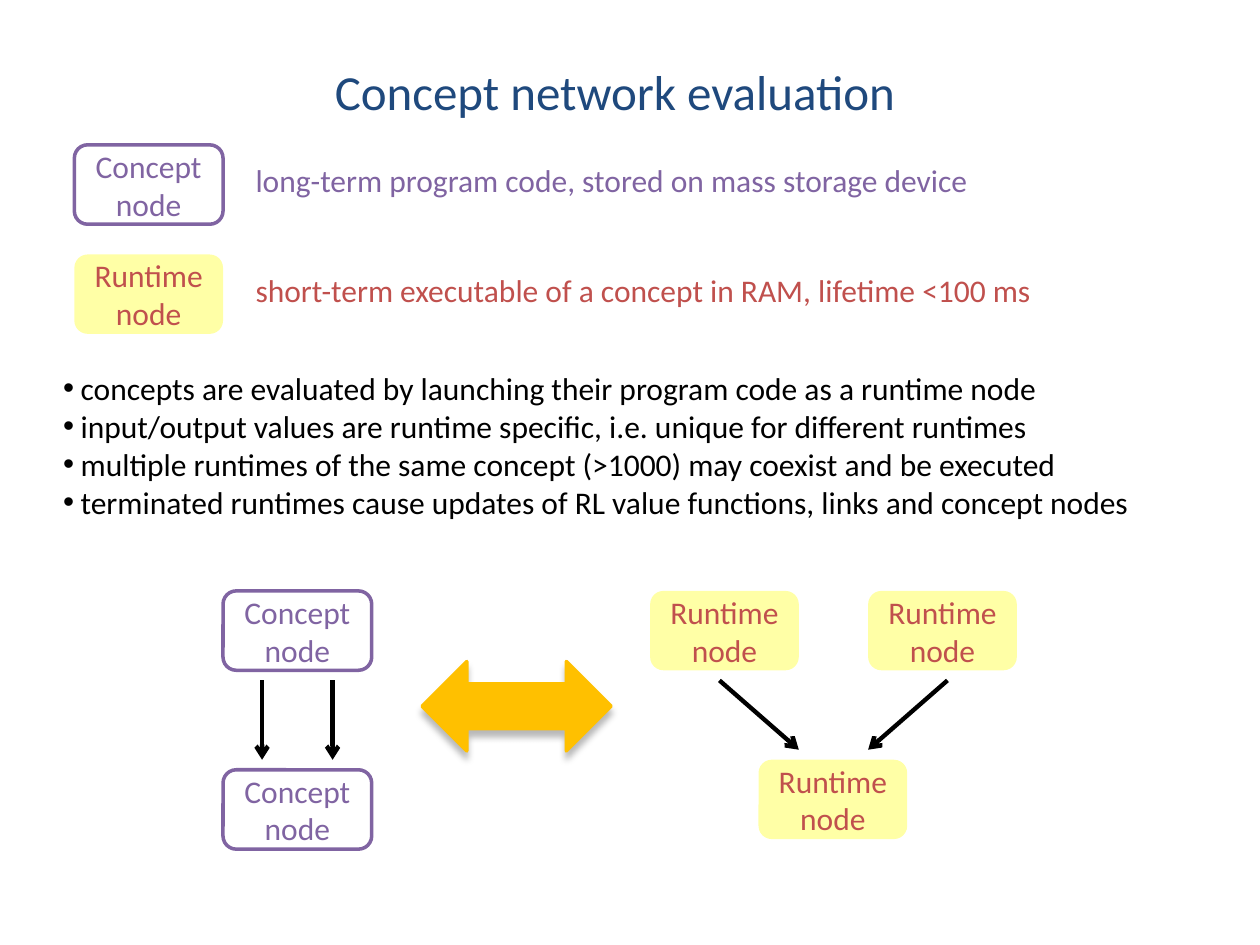
from lxml import etree
from pptx import Presentation
from pptx.dml.color import RGBColor
from pptx.enum.shapes import MSO_CONNECTOR, MSO_SHAPE
from pptx.enum.text import MSO_ANCHOR, MSO_AUTO_SIZE, PP_ALIGN
from pptx.oxml.ns import qn
from pptx.util import Inches, Pt

ROUND_RECT = MSO_SHAPE.ROUNDED_RECTANGLE
DOUBLE_ARROW = MSO_SHAPE.LEFT_RIGHT_ARROW
STRAIGHT = MSO_CONNECTOR.STRAIGHT
LEFT, CENTER = PP_ALIGN.LEFT, PP_ALIGN.CENTER
MIDDLE = MSO_ANCHOR.MIDDLE
NO_AUTOFIT = MSO_AUTO_SIZE.NONE

FONT = "Calibri"
COLORS = {
    "title": "1F497D",
    "concept": "8064A2",
    "concept_fill": "FFFFFF",
    "runtime": "C0504D",
    "runtime_fill": "FFFF00",
    "body": "000000",
    "arrow": "000000",
    "exchange": "FFC000",
}
NODE_W, NODE_H = 1.18, 0.63
BULLETS = [
    "concepts are evaluated by launching their program code as a runtime node",
    "input/output values are runtime specific, i.e. unique for different runtimes",
    "multiple runtimes of the same concept (>1000) may coexist and be executed",
    "terminated runtimes cause updates of RL value functions, links and concept nodes",
]


def rgb(name):
    return RGBColor.from_string(COLORS[name])


def place(sp, x, y, w, h):
    sp.left, sp.top, sp.width, sp.height = (Inches(v) for v in (x, y, w, h))


def format_text(tf, color, size=18, align=LEFT):
    for p in tf.paragraphs:
        p.alignment = align
        for r in p.runs:
            r.font.name = FONT
            r.font.size = Pt(size)
            r.font.color.rgb = rgb(color)


def add_node(slide, kind, x, y):
    """Rounded box: outlined for a concept, translucent for a runtime."""
    sp = slide.shapes.add_shape(ROUND_RECT, Inches(x), Inches(y),
                                Inches(NODE_W), Inches(NODE_H))
    sp.shadow.inherit = False
    sp.fill.solid()
    sp.fill.fore_color.rgb = rgb(kind + "_fill")
    if kind == "concept":
        sp.line.color.rgb = rgb(kind)
        sp.line.width = Pt(2)
    else:
        sp.line.fill.background()
        color = sp.fill._xPr.find(qn("a:solidFill"))[0]
        etree.SubElement(color, qn("a:alpha"), val="35000")
    tf = sp.text_frame
    tf.word_wrap = True
    tf.vertical_anchor = MIDDLE
    tf.text = kind.capitalize() + "\vnode"
    format_text(tf, kind, align=CENTER)


def add_arrow(slide, x1, y1, x2, y2):
    line = slide.shapes.add_connector(STRAIGHT, Inches(x1), Inches(y1),
                                      Inches(x2), Inches(y2))
    line.line.color.rgb = rgb("arrow")
    line.line.width = Pt(2.5)
    etree.SubElement(line.line._get_or_add_ln(), qn("a:tailEnd"), type="arrow")
    etree.SubElement(line._element.spPr, qn("a:effectLst"))


def add_title(slide, x, y, w, h):
    sp = slide.shapes.title
    place(sp, x, y, w, h)
    tf = sp.text_frame
    tf.text = "Concept network evaluation"
    tf.word_wrap = False
    tf.auto_size = NO_AUTOFIT
    format_text(tf, "title", 28, CENTER)


def add_definition(slide, kind, text, x, y, w):
    """A node with its explanation to the right."""
    add_node(slide, kind, x, y)
    box = slide.shapes.add_textbox(Inches(x + 1.34), Inches(y + 0.08),
                                   Inches(w), Inches(0.4))
    tf = box.text_frame
    tf.word_wrap = True
    tf.text = text
    format_text(tf, kind)


def add_bullets(slide, x, y, w, h):
    sp = slide.placeholders[1]
    place(sp, x, y, w, h)
    tf = sp.text_frame
    tf.text = "\n".join(BULLETS)
    tf.auto_size = NO_AUTOFIT
    format_text(tf, "body")
    for p in tf.paragraphs:
        p.space_before = Pt(0)
        pPr = p._p.get_or_add_pPr()
        pPr.set("marL", str(Inches(0.14)))
        pPr.set("indent", str(-Inches(0.14)))
        etree.SubElement(pPr, qn("a:buFont"), typeface="Arial")
        etree.SubElement(pPr, qn("a:buChar"), char="•")


def add_concept_graph(slide, x, y):
    """Two concepts joined by a pair of arrows."""
    for dy in (0, 1.42):
        add_node(slide, "concept", x, y + dy)
    for dx in (0.31, 0.87):
        add_arrow(slide, x + dx, y + 0.71, x + dx, y + 1.34)


def add_runtime_graph(slide, x, y):
    """Two runtimes feeding a third one below."""
    for dx, dy in ((0, 0), (1.73, 0), (0.86, 1.34)):
        add_node(slide, "runtime", x + dx, y + dy)
    for start, end in ((0.55, 1.18), (2.36, 1.73)):
        add_arrow(slide, x + start, y + 0.71, x + end, y + 1.26)


def add_exchange_arrow(slide, x, y, w, h):
    sp = slide.shapes.add_shape(DOUBLE_ARROW, Inches(x), Inches(y),
                                Inches(w), Inches(h))
    sp.fill.solid()
    sp.fill.fore_color.rgb = rgb("exchange")
    sp.line.color.rgb = rgb("exchange")
    sp.line.width = Pt(2)
    # Soft shadow straight below
    sp.shadow.inherit = False
    effects = sp._element.spPr.find(qn("a:effectLst"))
    shadow = etree.SubElement(effects, qn("a:outerShdw"), blurRad=str(Pt(4)),
                              dist=str(Pt(4)), dir="5400000", rotWithShape="0")
    color = etree.SubElement(shadow, qn("a:srgbClr"), val="000000")
    etree.SubElement(color, qn("a:alpha"), val="28000")


def main():
    prs = Presentation()
    prs.slide_width, prs.slide_height = Inches(10), Inches(7.5)
    slide = prs.slides.add_slide(prs.slide_layouts[1])

    # Title and definitions
    add_title(slide, 2.53, 0.44, 4.7, 0.57)
    add_definition(slide, "concept",
                   "long-term program code, stored on mass storage device",
                   0.59, 1.15, 6.5)
    add_definition(slide, "runtime",
                   "short-term executable of a concept in RAM, lifetime <100 ms",
                   0.59, 2.02, 6.5)

    # Key points
    add_bullets(slide, 0.4, 2.88, 9, 1.31)

    # Concepts and their runtimes
    add_concept_graph(slide, 1.77, 4.69)
    add_runtime_graph(slide, 5.16, 4.69)
    add_exchange_arrow(slide, 3.35, 5.25, 1.5, 0.71)

    prs.save("out.pptx")


if __name__ == "__main__":
    main()
